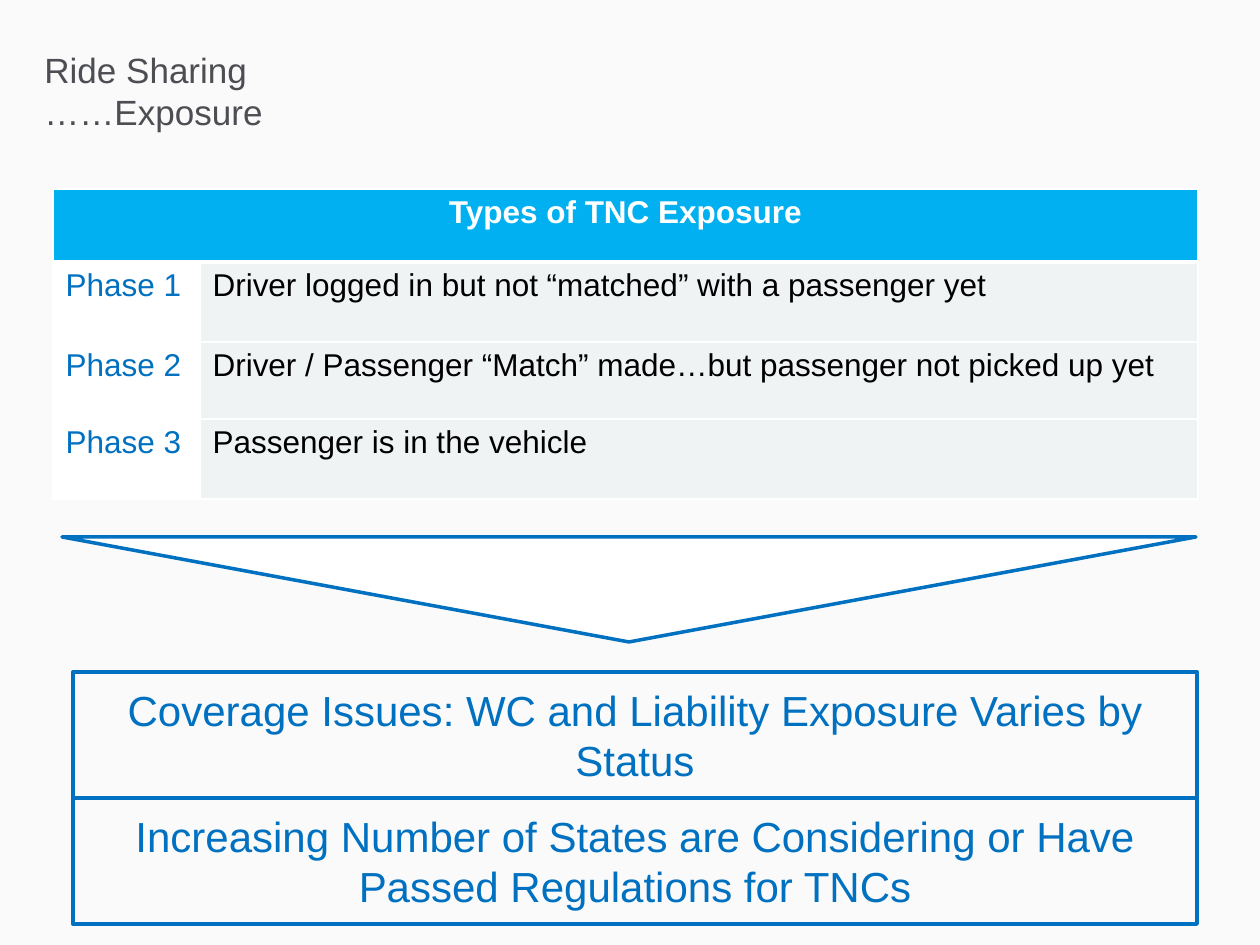
from dataclasses import dataclass

from lxml import etree
from pptx import Presentation
from pptx.dml.color import RGBColor
from pptx.enum.shapes import MSO_SHAPE as Preset
from pptx.enum.text import MSO_ANCHOR as Anchor, PP_ALIGN as Align
from pptx.oxml.ns import qn
from pptx.util import Pt

EMU_PER_PX = 914400 / 126
FONT = "Arial"
COLORS = {
    "background": "FAFAFA",
    "title": "4D4E53",
    "header": "00B0F0",
    "accent": "0070C0",
    "detail": "F0F3F4",
    "white": "FFFFFF",
    "black": "000000",
}


@dataclass(frozen=True)
class Box:
    left: int
    top: int
    width: int
    height: int

    def emu(self) -> list[int]:
        return [px(n) for n in (self.left, self.top, self.width, self.height)]


@dataclass(frozen=True)
class Phase:
    label: str
    detail: str
    height: int


PHASES = [
    Phase("Phase 1", "Driver logged in but not “matched” with a passenger yet", 80),
    Phase("Phase 2", "Driver / Passenger “Match” made…but passenger not picked up yet", 77),
    Phase("Phase 3", "Passenger is in the vehicle", 80),
]
ISSUES = [
    "Coverage Issues: WC and Liability Exposure Varies by Status",
    "Increasing Number of States are Considering or Have Passed Regulations for TNCs",
]
HEADER_HEIGHT = 73
COLUMN_WIDTHS = (147, 998)
ISSUE_HEIGHT = 126


def px(length: int) -> int:
    return round(length * EMU_PER_PX)


def rgb(color: str) -> RGBColor:
    return RGBColor.from_string(COLORS[color])


def write(frame, text: str, size: int, color: str, align=Align.LEFT, bold=False) -> None:
    frame.text = text
    for paragraph in frame.paragraphs:
        paragraph.alignment = align
        for run in paragraph.runs:
            run.font.name = FONT
            run.font.size = Pt(size)
            run.font.bold = bold
            run.font.color.rgb = rgb(color)


def add_borders(cell, bottom_width: int) -> None:
    properties = cell._tc.get_or_add_tcPr()
    widths = {"a:lnL": 1, "a:lnR": 1, "a:lnT": 1, "a:lnB": bottom_width}
    for position, (side, width) in enumerate(widths.items()):
        border = etree.Element(qn(side), w=str(Pt(width)))
        fill = etree.SubElement(border, qn("a:solidFill"))
        etree.SubElement(fill, qn("a:srgbClr"), val=COLORS["white"])
        properties.insert(position, border)


def paint_cell(cell, fill: str, bottom_width: int = 1) -> None:
    cell.fill.solid()
    cell.fill.fore_color.rgb = rgb(fill)
    add_borders(cell, bottom_width)


def add_exposure_table(slide, box: Box) -> None:
    table = slide.shapes.add_table(len(PHASES) + 1, 2, *box.emu()).table
    for column, width in zip(table.columns, COLUMN_WIDTHS):
        column.width = px(width)
    heights = [HEADER_HEIGHT] + [phase.height for phase in PHASES]
    for row, height in zip(table.rows, heights):
        row.height = px(height)
    header = table.cell(0, 0)
    header.merge(table.cell(0, 1))
    for column in range(2):
        paint_cell(table.cell(0, column), "header", 3)
    write(header.text_frame, "Types of TNC Exposure", 18, "white", Align.CENTER, True)
    for row, phase in enumerate(PHASES, start=1):
        label, detail = table.cell(row, 0), table.cell(row, 1)
        paint_cell(label, "white")
        paint_cell(detail, "detail")
        write(label.text_frame, phase.label, 18, "accent")
        write(detail.text_frame, phase.detail, 18, "black")


def add_title(slide, box: Box, text: str) -> None:
    frame = slide.shapes.add_textbox(*box.emu()).text_frame
    frame.word_wrap = True
    frame.vertical_anchor = Anchor.MIDDLE
    write(frame, text, 20, "title")


def add_outlined(slide, preset: Preset, box: Box, line_width: float):
    shape = slide.shapes.add_shape(preset, *box.emu())
    shape.shadow.inherit = False
    shape.fill.background()
    shape.line.color.rgb = rgb("accent")
    shape.line.width = Pt(line_width)
    return shape


def add_pointer(slide, box: Box) -> None:
    pointer = add_outlined(slide, Preset.ISOSCELES_TRIANGLE, box, 2)
    pointer.fill.solid()
    pointer.fill.fore_color.rgb = rgb("white")
    pointer._element.spPr.xfrm.set("flipV", "1")


def add_issue(slide, box: Box, text: str) -> None:
    frame = add_outlined(slide, Preset.RECTANGLE, box, 2.25).text_frame
    frame.word_wrap = True
    frame.vertical_anchor = Anchor.MIDDLE
    write(frame, text, 24, "accent", Align.CENTER)


def main() -> None:
    deck = Presentation()
    deck.slide_width, deck.slide_height = px(1260), px(945)
    slide = deck.slides.add_slide(deck.slide_layouts[6])
    slide.background.fill.solid()
    slide.background.fill.fore_color.rgb = rgb("background")

    table_height = HEADER_HEIGHT + sum(phase.height for phase in PHASES)
    add_exposure_table(slide, Box(53, 189, sum(COLUMN_WIDTHS), table_height))
    add_title(slide, Box(32, 48, 410, 84), "Ride Sharing\n……Exposure")
    add_pointer(slide, Box(62, 537, 1134, 105))
    for index, issue in enumerate(ISSUES):
        top = 672 + index * ISSUE_HEIGHT
        add_issue(slide, Box(73, top, 1124, ISSUE_HEIGHT), issue)

    deck.save("out.pptx")


if __name__ == "__main__":
    main()
